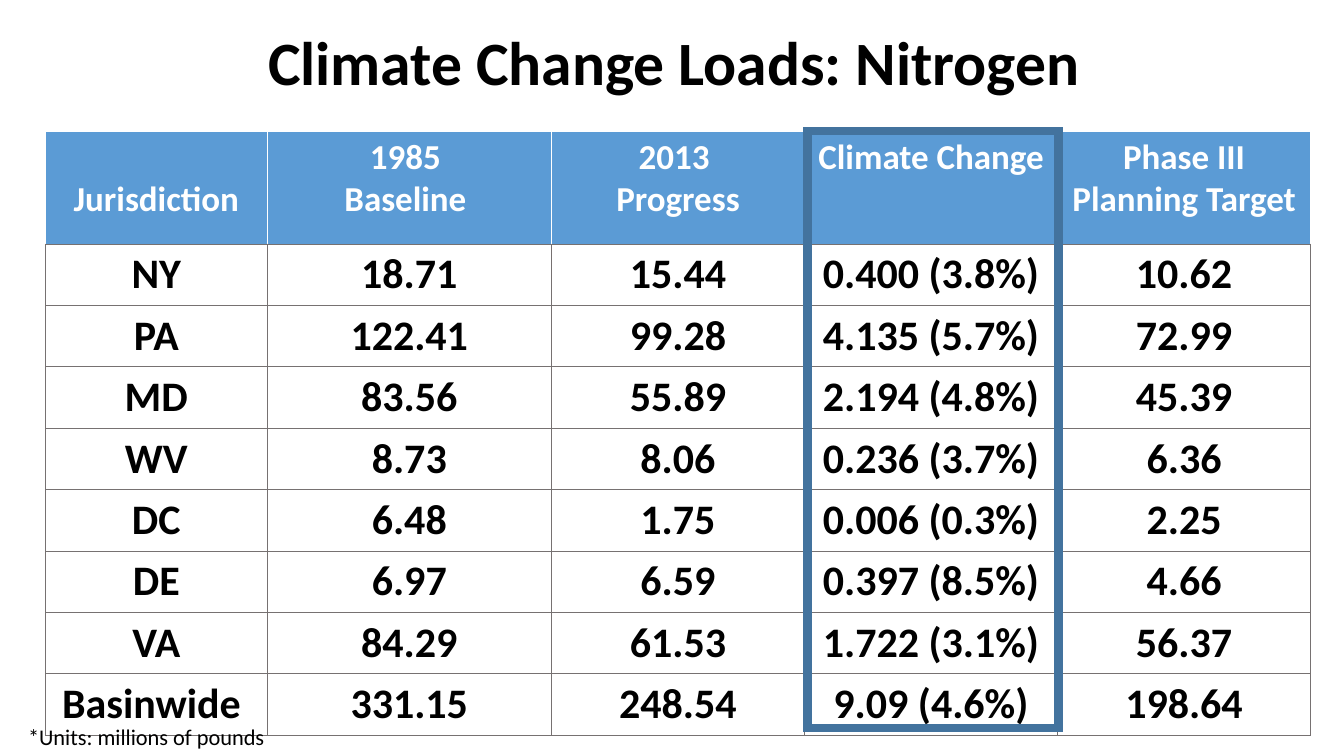
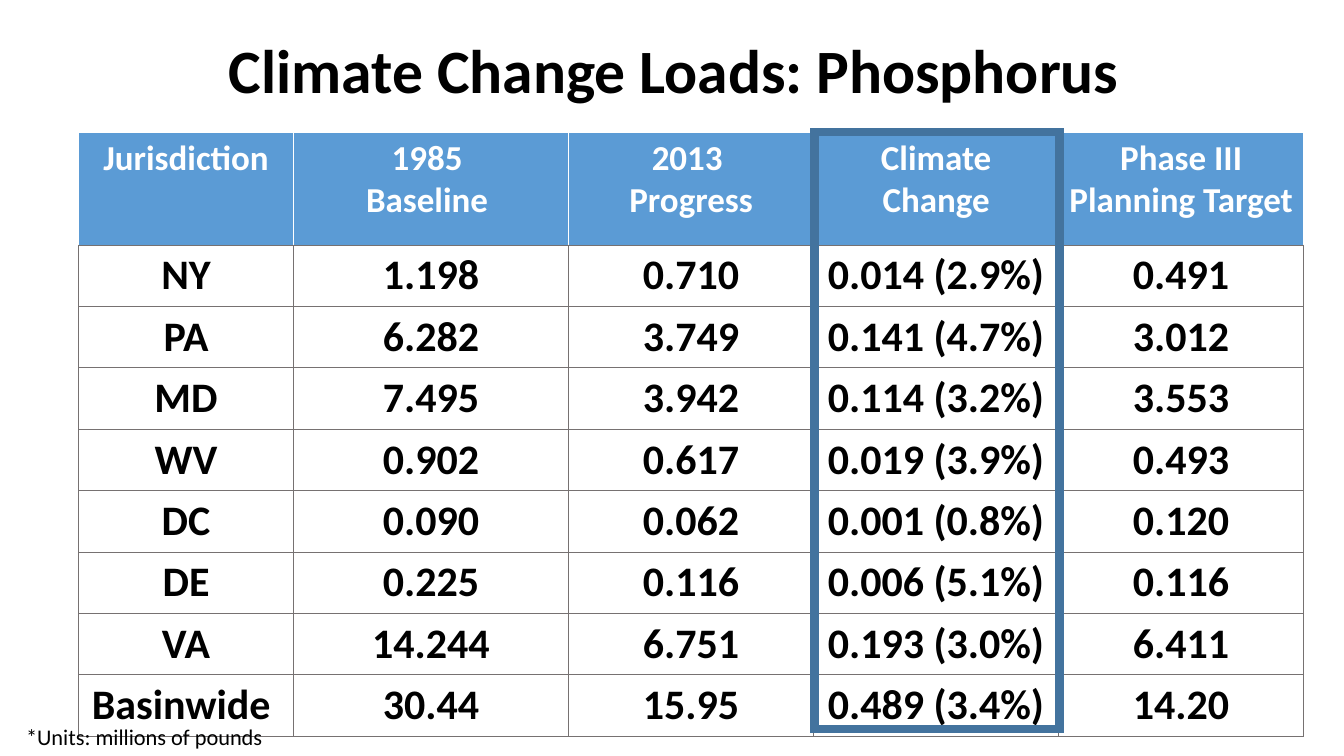
from dataclasses import dataclass

from lxml.etree import SubElement
from pptx import Presentation
from pptx.dml.color import RGBColor
from pptx.enum.shapes import MSO_SHAPE as Preset
from pptx.enum.text import MSO_ANCHOR as Anchor, MSO_AUTO_SIZE as AutoSize, PP_ALIGN as Align
from pptx.oxml.ns import qn
from pptx.slide import Slide
from pptx.table import Table, _Cell as Cell
from pptx.text.text import _Paragraph as Paragraph
from pptx.util import Inches, Pt

COLORS = {
    "header": "5B9BD5",
    "white": "FFFFFF",
    "black": "000000",
    "grid": "767171",
    "highlight": "43739E",
}
FONT = "Calibri"
TITLE_FONT = {"name": FONT, "size": Pt(44), "bold": True}
HEADER_FONT = {"name": FONT, "size": Pt(25), "bold": True}
BODY_FONT = {"name": FONT, "size": Pt(30), "bold": True}
NOTE_FONT = {"name": FONT, "size": Pt(16), "bold": False}

HEADERS = (
    "Jurisdiction",
    "1985 \nBaseline ",
    "2013 \nProgress",
    "Climate Change",
    "Phase III Planning Target",
)
JURISDICTIONS = ("NY", "PA", "MD", "WV", "DC", "DE", "VA", "Basinwide ")
HEADER_HEIGHT, ROW_HEIGHT, TABLE_HEIGHT = 1.12, 0.56, 5.92
GRID_BORDER = ("grid", 0.5)
HEADER_BORDER = ("white", 1)


@dataclass(frozen=True)
class LoadSlide:
    nutrient: str
    title_height: float
    table_left: float
    table_top: float
    column_widths: tuple[float, ...]
    first_header_top: float
    highlight_left: float
    highlight_width: float
    note_left: float
    values: tuple[tuple[str, str, str, str], ...]


LOAD_SLIDES = (
    LoadSlide(
        "Nitrogen", 1.3, 0.45, 1.3, (2.2, 2.82, 2.51, 2.51, 2.51), 0.47, 8.01, 2.49, 0.18,
        (
            ("18.71", "15.44", "0.400 (3.8%)", "10.62"),
            ("122.41", "99.28", "4.135 (5.7%)", "72.99"),
            ("83.56", "55.89", "2.194 (4.8%)", "45.39"),
            ("8.73", "8.06", "0.236 (3.7%)", "6.36"),
            ("6.48", "1.75", "0.006 (0.3%)", "2.25"),
            ("6.97", "6.59", "0.397 (8.5%)", "4.66"),
            ("84.29", "61.53", "1.722 (3.1%)", "56.37"),
            ("331.15", "248.54", "9.09 (4.6%)", "198.64"),
        ),
    ),
    LoadSlide(
        "Phosphorus", 1.45, 0.78, 1.31, (2.13, 2.73, 2.43, 2.43, 2.43), 0.05, 8.08, 2.43, 0.16,
        (
            ("1.198", "0.710", "0.014 (2.9%)", "0.491"),
            ("6.282", "3.749", "0.141 (4.7%)", "3.012"),
            ("7.495", "3.942", "0.114 (3.2%)", "3.553"),
            ("0.902", "0.617", "0.019 (3.9%)", "0.493"),
            ("0.090", "0.062", "0.001 (0.8%)", "0.120"),
            ("0.225", "0.116", "0.006 (5.1%)", "0.116"),
            ("14.244", "6.751", "0.193 (3.0%)", "6.411"),
            ("30.44", "15.95", "0.489 (3.4%)", "14.20"),
        ),
    ),
)


def rgb(color: str) -> RGBColor:
    return RGBColor.from_string(COLORS[color])


def format_paragraph(paragraph: Paragraph, font: dict, color: str, alignment: Align) -> None:
    paragraph.alignment = alignment
    for run in paragraph.runs:
        for attribute, value in font.items():
            setattr(run.font, attribute, value)
        run.font.color.rgb = rgb(color)


def add_borders(cell: Cell, is_header: bool) -> None:
    properties = cell._tc.get_or_add_tcPr()
    for side in "LRTB":
        color, width = HEADER_BORDER if is_header and side != "B" else GRID_BORDER
        line = SubElement(properties, qn(f"a:ln{side}"), w=str(Pt(width)))
        fill = SubElement(line, qn("a:solidFill"))
        SubElement(fill, qn("a:srgbClr"), val=COLORS[color])


def fill_cell(cell: Cell, text: str, is_header: bool) -> None:
    add_borders(cell, is_header)
    cell.fill.solid()
    cell.fill.fore_color.rgb = rgb("header" if is_header else "white")
    cell.text = text
    font, color = (HEADER_FONT, "white") if is_header else (BODY_FONT, "black")
    for paragraph in cell.text_frame.paragraphs:
        format_paragraph(paragraph, font, color, Align.CENTER)


def add_load_table(slide: Slide, load: LoadSlide) -> Table:
    rows = [HEADERS]
    rows += [(name, *values) for name, values in zip(JURISDICTIONS, load.values, strict=True)]
    table = slide.shapes.add_table(
        len(rows), len(HEADERS), Inches(load.table_left), Inches(load.table_top),
        Inches(sum(load.column_widths)), Inches(TABLE_HEIGHT),
    ).table
    table.horz_banding = False
    for column, width in zip(table.columns, load.column_widths):
        column.width = Inches(width)
    for row_index, texts in enumerate(rows):
        is_header = row_index == 0
        table.rows[row_index].height = Inches(HEADER_HEIGHT if is_header else ROW_HEIGHT)
        for column_index, text in enumerate(texts):
            fill_cell(table.cell(row_index, column_index), text, is_header)
    table.cell(0, 0).margin_top = Inches(load.first_header_top)
    return table


def set_title(slide: Slide, load: LoadSlide) -> None:
    title = slide.shapes.title
    title.left, title.top = Inches(0.94), Inches(0)
    title.width, title.height = Inches(11.5), Inches(load.title_height)
    frame = title.text_frame
    frame.text = f"Climate Change Loads: {load.nutrient}"
    frame.auto_size = AutoSize.NONE
    frame.vertical_anchor = Anchor.MIDDLE
    paragraph = frame.paragraphs[0]
    paragraph.line_spacing = 0.9
    format_paragraph(paragraph, TITLE_FONT, "black", Align.CENTER)


def add_units_note(slide: Slide, left: float) -> None:
    note = slide.shapes.add_textbox(Inches(left), Inches(7.13), Inches(3.19), Inches(0.37))
    frame = note.text_frame
    frame.word_wrap = True
    frame.auto_size = AutoSize.SHAPE_TO_FIT_TEXT
    frame.text = "*Units: millions of pounds"
    format_paragraph(frame.paragraphs[0], NOTE_FONT, "black", Align.LEFT)


def add_highlight(slide: Slide, load: LoadSlide) -> None:
    """Frame the climate change column."""
    shape = slide.shapes.add_shape(
        Preset.RECTANGLE, Inches(load.highlight_left), Inches(load.table_top),
        Inches(load.highlight_width), Inches(TABLE_HEIGHT),
    )
    shape.shadow.inherit = False
    shape.fill.background()
    shape.line.color.rgb = rgb("highlight")
    shape.line.width = Pt(6)
    SubElement(shape.line._get_or_add_ln(), qn("a:miter"), lim="800000")


def main() -> None:
    presentation = Presentation()
    presentation.slide_width, presentation.slide_height = Inches(13.33), Inches(7.5)
    title_only = presentation.slide_layouts.get_by_name("Title Only")
    for load in LOAD_SLIDES:
        slide = presentation.slides.add_slide(title_only)
        add_load_table(slide, load)
        set_title(slide, load)
        add_units_note(slide, load.note_left)
        add_highlight(slide, load)
    presentation.save("out.pptx")


if __name__ == "__main__":
    main()
